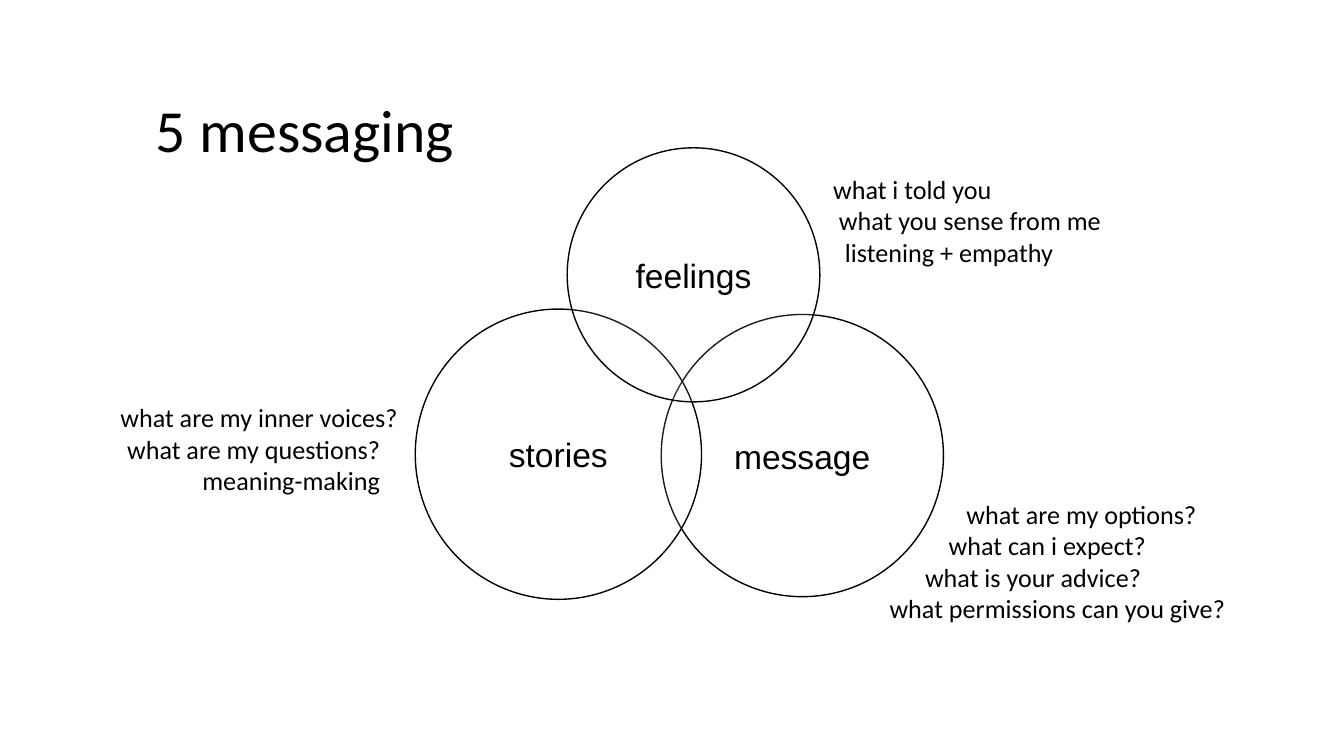
from lxml import etree
from pptx import Presentation
from pptx.dml.color import RGBColor
from pptx.enum import shapes, text
from pptx.oxml import ns
from pptx.util import Inches, Pt

COLORS = {"ink": "000000", "paper": "FFFFFF"}
SPACE = 0.044  # one indent step beside the circles, in inches
LEFT, RIGHT = text.PP_ALIGN.LEFT, text.PP_ALIGN.RIGHT


def color(name):
    return RGBColor.from_string(COLORS[name])


def set_font(p, name, size):
    p.font.name, p.font.size = name, Pt(size)
    p.font.color.rgb = color("ink")


def add_title(s, box, title):
    sp = s.shapes.title
    sp.left, sp.top, sp.width, sp.height = map(Inches, box)
    tf = sp.text_frame
    tf.text = title
    tf.word_wrap = True
    tf.auto_size = text.MSO_AUTO_SIZE.NONE
    tf.vertical_anchor = text.MSO_ANCHOR.TOP
    tf.margin_left = tf.margin_right = tf.margin_top = tf.margin_bottom = Inches(0.1)
    p = tf.paragraphs[0]
    p.alignment, p.line_spacing = LEFT, 0.9
    set_font(p, "Calibri", 32)


def add_notes(s, box, align, lines):
    """Place a list of (text, indent steps) that follows a circle's edge."""
    tf = s.shapes.add_textbox(*map(Inches, box)).text_frame
    tf.word_wrap = True
    tf.auto_size = text.MSO_AUTO_SIZE.SHAPE_TO_FIT_TEXT
    side = "marR" if align == RIGHT else "marL"
    for i, (line, steps) in enumerate(lines):
        p = tf.paragraphs[0] if i == 0 else tf.add_paragraph()
        p.text = line
        p.alignment = align
        set_font(p, "Calibri", 14)
        p._p.get_or_add_pPr().set(side, str(Inches(steps * SPACE)))


def add_circle(s, box, label):
    sp = s.shapes.add_shape(shapes.MSO_SHAPE.OVAL, *map(Inches, box))
    sp.shadow.inherit = False
    sp.fill.solid()
    sp.fill.fore_color.rgb = color("paper")
    rgb = sp.fill._xPr.find(".//" + ns.qn("a:srgbClr"))
    etree.SubElement(rgb, ns.qn("a:alpha"), val="11000")
    sp.line.color.rgb = color("ink")
    sp.line.width = Pt(0.75)
    tf = sp.text_frame
    tf.text = label
    tf.vertical_anchor = text.MSO_ANCHOR.MIDDLE
    tf.margin_left = tf.margin_right = tf.margin_top = tf.margin_bottom = Inches(0.1)
    p = tf.paragraphs[0]
    p.alignment = text.PP_ALIGN.CENTER
    set_font(p, "Arial", 18)


def main():
    prs = Presentation()
    prs.slide_width = Inches(10)
    prs.slide_height = prs.slide_width * 9 // 16
    s = prs.slides.add_slide(prs.slide_layouts[5])

    add_title(s, (1.06, 0.65, 4, 0.94), "5 messaging")

    # Notes beside the circles
    add_notes(s, (6.1, 1.24, 2.61, 0.81), LEFT, [
        ("what i told you", 0),
        ("what you sense from me", 1),
        ("listening + empathy", 2),
    ])
    add_notes(s, (0, 2.94, 3.06, 0.81), RIGHT, [
        ("what are my inner voices?", 0),
        ("what are my questions?", 3),
        ("meaning-making", 3),
    ])
    add_notes(s, (6.52, 3.66, 3.39, 1.04), LEFT, [
        ("what are my options?", 13),
        ("what can i expect?", 10),
        ("what is your advice?", 6),
        ("what permissions can you give?", 0),
    ])

    # Overlapping circles
    add_circle(s, (4.92, 2.34, 2.1, 2.1), "message")
    add_circle(s, (3.09, 2.3, 2.13, 2.16), "stories")
    add_circle(s, (4.22, 1.1, 1.88, 1.89), "feelings")

    prs.save("out.pptx")


if __name__ == "__main__":
    main()
